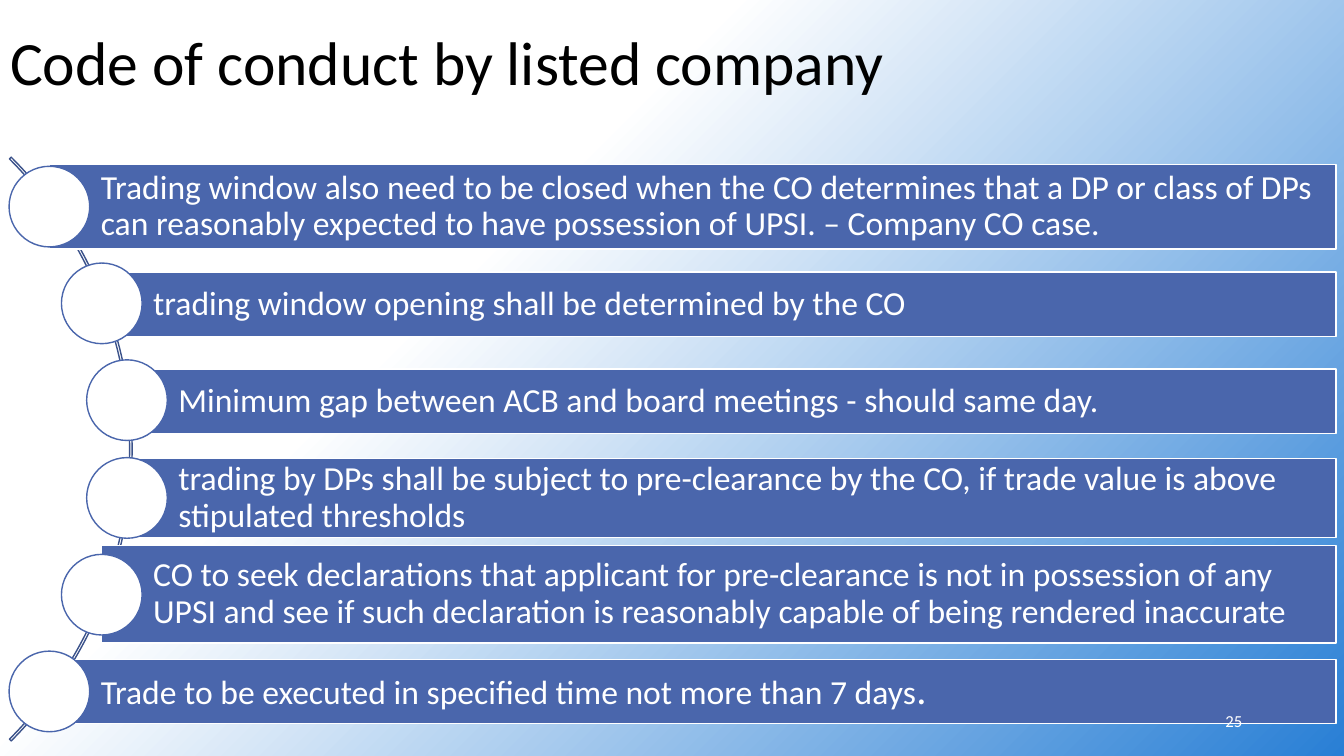
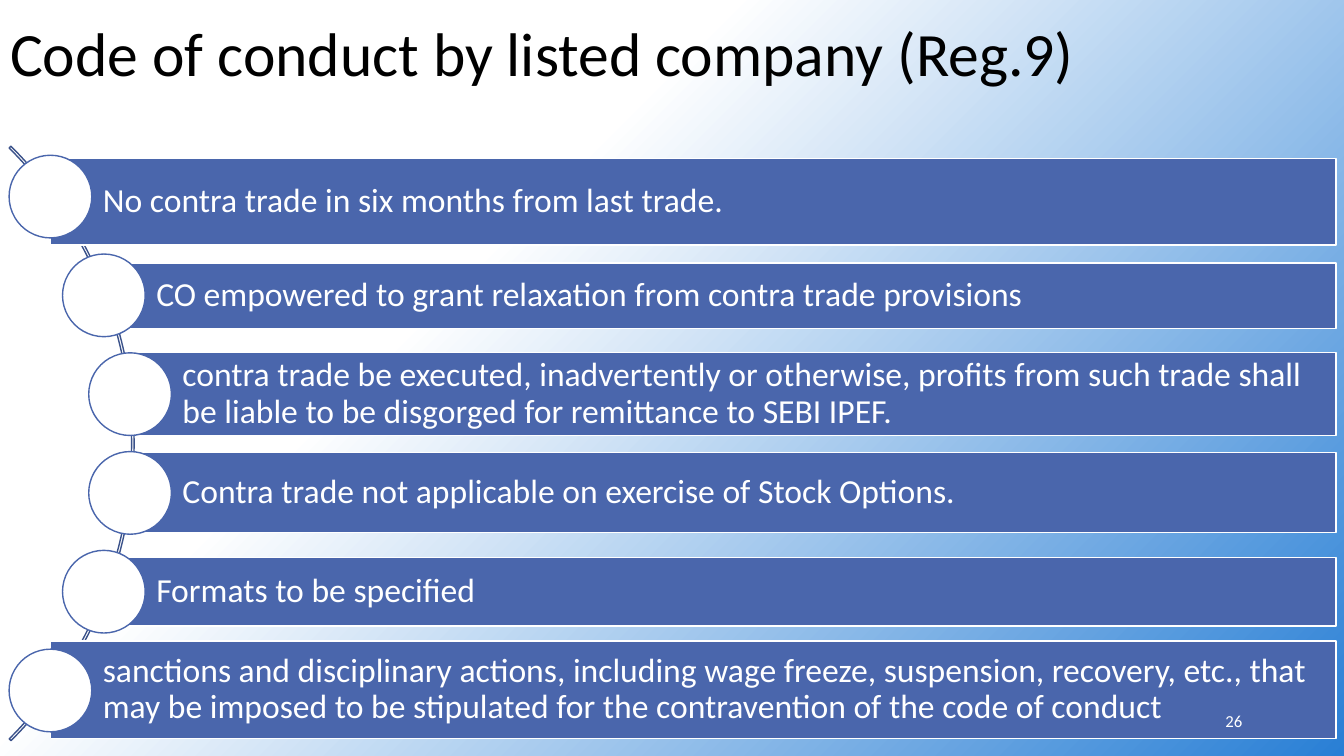
"""Build two slides that list code of conduct rules along an arc."""
import copy

import pptx
import pptx.dml.color
import pptx.enum.shapes
import pptx.enum.text
import pptx.oxml.ns
import pptx.util

PX = 9144
COLOURS = {
    "white": "FFFFFF",
    "black": "000000",
    "sky": "297FD5",
    "bar": "4A66AC",
    "arc": "3B528A",
}
SHAPES = pptx.enum.shapes.MSO_SHAPE
ALIGN = pptx.enum.text.PP_ALIGN
FONT = "Calibri"
SLIDE_WIDTH, SLIDE_HEIGHT = 1333, 750
CIRCLE_LEFT, BAR_RIGHT = 9, 1325
INDENTS = (0, 1.3, 1.92, 1.92, 1.3, 0)
FRAME = {
    "word_wrap": True,
    "auto_size": pptx.enum.text.MSO_AUTO_SIZE.NONE,
    "vertical_anchor": pptx.enum.text.MSO_ANCHOR.MIDDLE,
}

SLIDES = [
    {
        "title": "Code of conduct by listed company",
        "title_height": 130,
        "number": "25",
        "arc": (-688, 36, 819),
        "radius": 40,
        "centres": (205, 686),
        "bars": [
            (163, 84, [("Trading window also need to be closed when the CO determines that a DP or class of DPs "
                        "can reasonably expected to have possession of UPSI. – Company CO case.", 24)]),
            (270, 64, [("trading window opening shall be determined by the CO", 24)]),
            (366, 64, [("Minimum gap between ACB and board meetings - should same day.", 24)]),
            (455, 78, [("trading by DPs shall be subject to pre-clearance by the CO, if trade value is above "
                        "stipulated thresholds", 24)]),
            (541, 97, [("CO to seek declarations that applicant for pre-clearance is not in possession of any "
                        "UPSI and see if such declaration is reasonably capable of being rendered inaccurate", 24)]),
            (654, 64, [("Trade to be executed in specified time not more than 7 days", 24), (".", 29)]),
        ],
    },
    {
        "title": "Code of conduct by listed company (Reg.9)",
        "title_height": 113,
        "number": "26",
        "arc": (-701, 23, 834),
        "radius": 41,
        "centres": (195, 685),
        "bars": [
            (157, 86, [("No contra trade in six months from last trade.", 24)]),
            (261, 65, [("CO empowered to grant relaxation from contra trade provisions", 24)]),
            (350, 82, [("contra trade be executed, inadvertently or otherwise, profits from such trade shall "
                        "be liable to be disgorged for remittance to SEBI IPEF.", 24)]),
            (449, 79, [("Contra trade not applicable on exercise of Stock Options.", 24)]),
            (553, 68, [("Formats to be specified", 24)]),
            (636, 97, [("sanctions and disciplinary actions, including wage freeze, suspension, recovery, etc., that "
                        "may be imposed to be stipulated for the contravention of the code of conduct", 24)]),
        ],
    },
]


def rgb(name):
    """Return the named colour."""
    return pptx.dml.color.RGBColor.from_string(COLOURS[name])


def apply(target, formats):
    """Set every attribute in formats on target."""
    for name, value in formats.items():
        setattr(target, name, value)


def place(left, top, width, height):
    """Return the four lengths in EMU."""
    return [length * PX for length in (left, top, width, height)]


def write(box, spans, colour, align=ALIGN.LEFT, spacing=0.9, margins=None):
    """Fill a box with one formatted paragraph."""
    frame = box.text_frame
    apply(frame, FRAME)
    apply(frame, margins or {})
    para = frame.paragraphs[0]
    apply(para, {"alignment": align, "line_spacing": spacing})
    for text, size in spans:
        span = para.add_run()
        span.text = text
        apply(span.font, {"name": FONT, "size": pptx.util.Pt(size)})
        span.font.color.rgb = rgb(colour)


def add_shape(page, kind, at, fill, line):
    """Add an outlined preset shape without a shadow."""
    shape = page.shapes.add_shape(kind, *place(*at))
    shape.shadow.inherit = False
    if fill:
        shape.fill.solid()
        shape.fill.fore_color.rgb = rgb(fill)
    else:
        shape.fill.background()
    shape.line.color.rgb = rgb(line)
    shape.line.width = pptx.util.Pt(1)
    return shape


def set_background(deck):
    """Give the slide master its diagonal gradient."""
    master = deck.slide_master
    fill = master.background.fill
    fill.gradient()
    fill.gradient_angle = 315
    stop_list = master.element.find(".//" + pptx.oxml.ns.qn("a:gsLst"))
    stop_list.append(copy.deepcopy(stop_list[-1]))
    stops = zip(fill.gradient_stops, (0, 0.35, 1), ("white", "white", "sky"))
    for stop, position, colour in stops:
        stop.position = position
        stop.color.rgb = rgb(colour)


def add_title(page, text, height):
    """Move and fill the title placeholder."""
    title = page.shapes.title
    names = ("left", "top", "width", "height")
    apply(title, dict(zip(names, place(0, 0, SLIDE_WIDTH, height))))
    write(title, [(text, 44)], "black")


def add_arc(page, left, top, size):
    """Add the thin arc that links the circles."""
    arc = add_shape(page, SHAPES.BLOCK_ARC, (left, top, size, size), None, "arc")
    for index, value in enumerate((189, 27, 0.003)):
        arc.adjustments[index] = value


def add_bars(page, bars, radius, centres):
    """Add text bars whose circles are evenly spaced down the arc."""
    first, last = centres
    step = (last - first) / (len(bars) - 1)
    margins = {"margin_left": (radius + 11) * PX}
    margins.update({"margin_" + side: 7 * PX for side in ("top", "right", "bottom")})
    for index, (top, height, spans) in enumerate(bars):
        left = CIRCLE_LEFT + round(radius * INDENTS[index])
        middle = left + radius
        bar_at = (middle, top, BAR_RIGHT - middle, height)
        bar = add_shape(page, SHAPES.RECTANGLE, bar_at, "bar", "white")
        write(bar, spans, "white", margins=margins)
        circle_top = round(first + index * step) - radius
        circle_at = (left, circle_top, 2 * radius, 2 * radius)
        add_shape(page, SHAPES.OVAL, circle_at, "white", "bar")


def add_number(page, number):
    """Add the page number at the lower right."""
    box = page.shapes.add_textbox(*place(942, 695, 300, 40))
    write(box, [(number, 12)], "white", ALIGN.RIGHT, 1.0)


def main():
    """Build and save the deck."""
    deck = pptx.Presentation()
    apply(deck, {"slide_width": SLIDE_WIDTH * PX, "slide_height": SLIDE_HEIGHT * PX})
    set_background(deck)
    for content in SLIDES:
        page = deck.slides.add_slide(deck.slide_layouts[5])
        add_title(page, content["title"], content["title_height"])
        add_arc(page, *content["arc"])
        add_bars(page, content["bars"], content["radius"], content["centres"])
        add_number(page, content["number"])
    deck.save("out.pptx")


if __name__ == "__main__":
    main()
